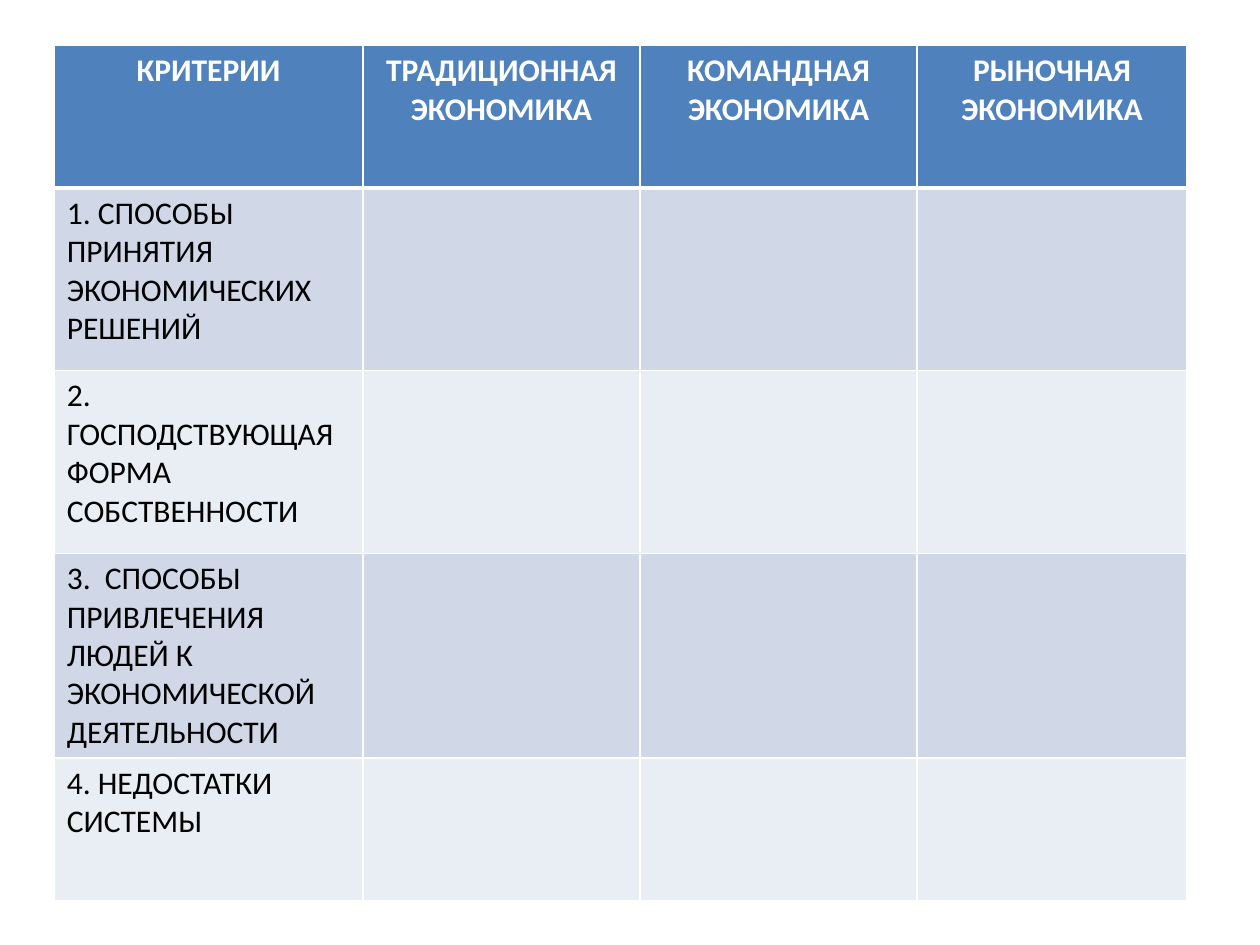
from dataclasses import dataclass

import pptx
import pptx.dml.color
import pptx.enum.text
import pptx.oxml
import pptx.oxml.ns
import pptx.util

Pt = pptx.util.Pt
RGB = pptx.dml.color.RGBColor.from_string
ALIGN = pptx.enum.text.PP_ALIGN


@dataclass(frozen=True)
class Theme:
    font: str = "Calibri"
    text_size: float = 18
    header_fill: str = "4F81BD"
    band_fills: tuple = ("D0D8E8", "E9EDF4")
    header_text: str = "FFFFFF"
    body_text: str = "000000"
    rule: str = "FFFFFF"
    thin_rule: float = 1
    header_rule: float = 3


@dataclass(frozen=True)
class Box:
    left: float
    top: float
    width: float
    height: float


THEME = Theme()

SYSTEMS = ["ТРАДИЦИОННАЯ ЭКОНОМИКА", "КОМАНДНАЯ ЭКОНОМИКА", "РЫНОЧНАЯ ЭКОНОМИКА"]
CRITERIA = [
    "1. СПОСОБЫ ПРИНЯТИЯ ЭКОНОМИЧЕСКИХ РЕШЕНИЙ",
    "2. ГОСПОДСТВУЮЩАЯ ФОРМА СОБСТВЕННОСТИ",
    "3.  СПОСОБЫ ПРИВЛЕЧЕНИЯ ЛЮДЕЙ К ЭКОНОМИЧЕСКОЙ ДЕЯТЕЛЬНОСТИ",
    "4. НЕДОСТАТКИ СИСТЕМЫ",
]
COLUMN_WIDTHS = [176.4, 158.4, 158.4, 154.1]
ROW_HEIGHTS = [81.4, 104.4, 104.4, 100, 81.4]


def write_text(text_frame, text, color=THEME.body_text, bold=False, align=ALIGN.LEFT):
    paragraph = text_frame.paragraphs[0]
    paragraph.alignment = align
    run = paragraph.add_run()
    run.text = text
    run.font.name = THEME.font
    run.font.size = Pt(THEME.text_size)
    run.font.bold = bold
    run.font.color.rgb = RGB(color)


def draw_borders(cell, top, bottom):
    """Rule all four sides; the fill must already be set, as borders precede it."""
    properties = cell._tc.get_or_add_tcPr()
    weights = {"lnL": THEME.thin_rule, "lnR": THEME.thin_rule, "lnT": top, "lnB": bottom}
    for position, (side, weight) in enumerate(weights.items()):
        properties.insert(position, pptx.oxml.parse_xml(
            f'<a:{side} {pptx.oxml.ns.nsdecls("a")} w="{Pt(weight)}">'
            f'<a:solidFill><a:srgbClr val="{THEME.rule}"/></a:solidFill></a:{side}>'
        ))


def style_cell(cell, row):
    fill = THEME.header_fill if row == 0 else THEME.band_fills[(row - 1) % 2]
    cell.fill.solid()
    cell.fill.fore_color.rgb = RGB(fill)
    draw_borders(
        cell,
        top=THEME.header_rule if row == 1 else THEME.thin_rule,
        bottom=THEME.header_rule if row == 0 else THEME.thin_rule,
    )


def add_comparison_table(slide, box):
    frame = slide.shapes.add_table(
        len(ROW_HEIGHTS), len(COLUMN_WIDTHS),
        Pt(box.left), Pt(box.top), Pt(box.width), Pt(box.height),
    )
    table = frame.table
    for column, share in zip(table.columns, COLUMN_WIDTHS):
        column.width = Pt(box.width * share / sum(COLUMN_WIDTHS))
    for row, height in zip(table.rows, ROW_HEIGHTS):
        row.height = Pt(height)
    frame.height = Pt(box.height)

    for row_index, row in enumerate(table.rows):
        for cell in row.cells:
            style_cell(cell, row_index)
    for column, heading in enumerate(["КРИТЕРИИ", *SYSTEMS]):
        write_text(table.cell(0, column).text_frame, heading,
                   color=THEME.header_text, bold=True, align=ALIGN.CENTER)
    for row_index, criterion in enumerate(CRITERIA, start=1):
        write_text(table.cell(row_index, 0).text_frame, criterion)


def main():
    presentation = pptx.Presentation()
    presentation.slide_width = Pt(720)
    presentation.slide_height = Pt(540)
    slide = presentation.slides.add_slide(presentation.slide_layouts[6])
    add_comparison_table(slide, Box(31, 26, 647.3, 485.3))
    presentation.save("out.pptx")


if __name__ == "__main__":
    main()
